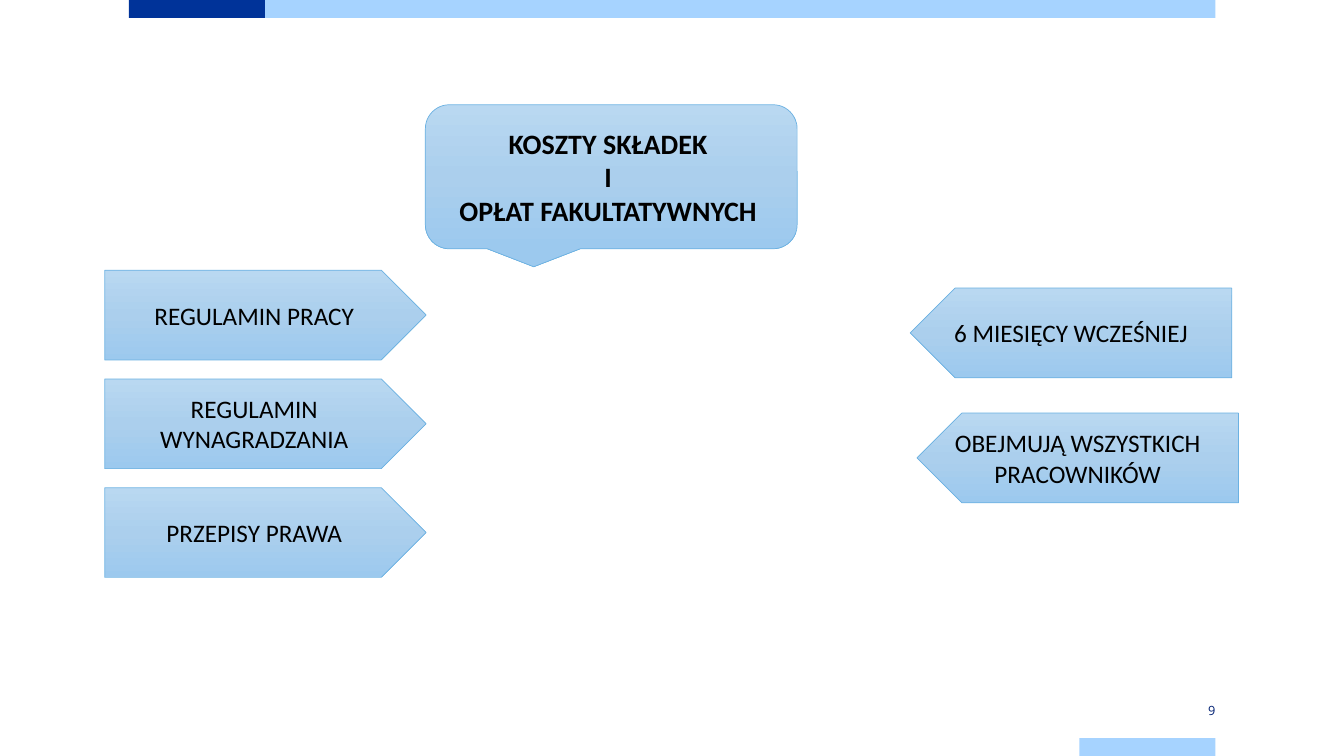
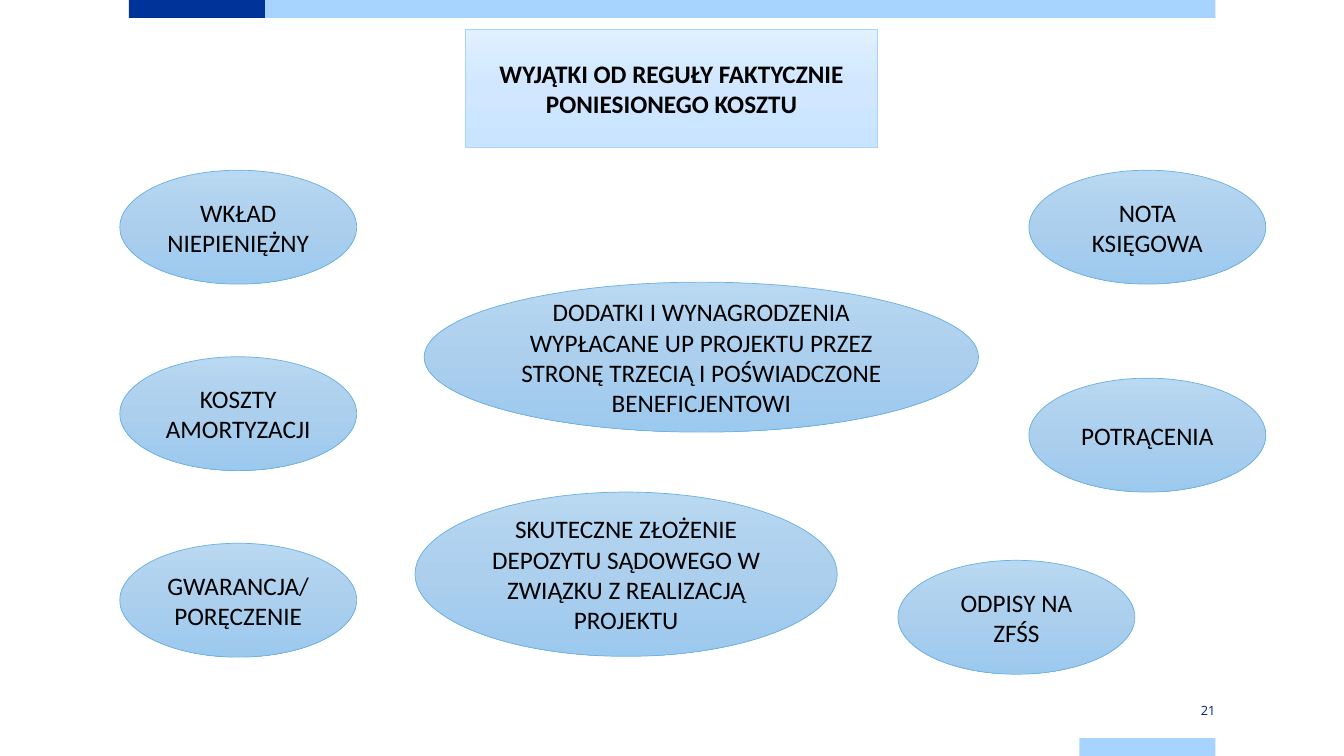
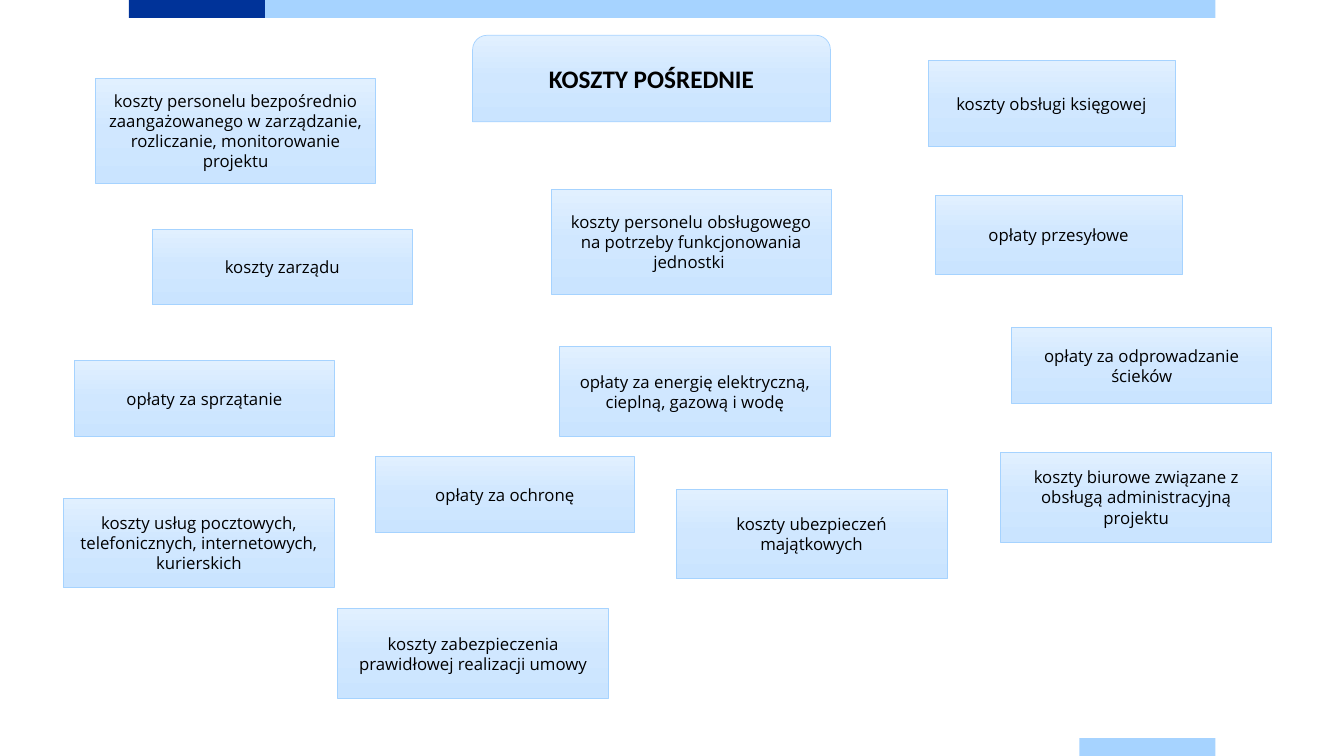
import copy

import pptx
import pptx.dml.color
import pptx.enum.shapes
import pptx.enum.text
import pptx.oxml.ns
import pptx.util

Cm = pptx.util.Cm
SHAPE = pptx.enum.shapes.MSO_SHAPE
ALIGN = pptx.enum.text.PP_ALIGN

COLORS = {
    "navy": "003399",
    "sky": "A6D3FF",
    "number": "002073",
    "text": "000000",
}
STYLES = {
    "blue": {"stops": ("B9D8F1", "ABCFED", "9CC9EE"), "line": "6BB1E2"},
    "pale": {"stops": ("E1F0FF", "D0E7FF", "CAE4FF"), "line": "A6D3FF"},
}
HEADING_FONT = "Calibri"
BODY_FONT = "Open Sans"

BAND_HEIGHT = 0.45
BANDS = [
    (3.25, 0, 3.43, "navy"),
    (6.68, 0, 23.95, "sky"),
    (27.2, 18.6, 3.43, "sky"),
]

PLATE_SIZE = (8.1, 2.26)
PLATE_TIP = 1.13
OVAL_SIZE = (5.97, 2.87)
TALL = (7.06, 2.64)
SLIM = (6.55, 1.91)
WIDE = (6.83, 2.26)

INDIRECT_COSTS = [
    ("koszty personelu bezpośrednio zaangażowanego w zarządzanie, rozliczanie, monitorowanie projektu", 2.41, 1.98, TALL),
    ("koszty zarządu", 3.84, 5.77, SLIM),
    ("koszty personelu obsługowego na potrzeby funkcjonowania jednostki ", 13.89, 4.78, TALL),
    ("koszty obsługi księgowej", 23.39, 1.52, (6.22, 2.18)),
    ("opłaty za energię elektryczną, cieplną, gazową i wodę", 14.1, 8.74, WIDE),
    ("opłaty przesyłowe", 23.57, 4.93, (6.22, 1.98)),
    ("opłaty za sprzątanie", 1.88, 9.09, SLIM),
    ("opłaty za odprowadzanie ścieków", 25.5, 8.26, SLIM),
    ("opłaty za ochronę", 9.45, 11.51, SLIM),
    ("koszty ubezpieczeń majątkowych", 17.04, 12.32, WIDE),
    ("koszty zabezpieczenia prawidłowej realizacji umowy", 8.51, 15.34, WIDE),
    ("koszty biurowe związane z obsługą administracyjną projektu", 25.22, 11.4, WIDE),
    ("koszty usług pocztowych, telefonicznych, internetowych, kurierskich", 1.6, 12.55, WIDE),
]


def rgb(value):
    return pptx.dml.color.RGBColor.from_string(value)


def write(shape, text, size, font=HEADING_FONT, bold=False, color="text", align=ALIGN.CENTER):
    frame = shape.text_frame
    frame.text = text
    frame.word_wrap = True
    frame.auto_size = pptx.enum.text.MSO_AUTO_SIZE.NONE
    frame.vertical_anchor = pptx.enum.text.MSO_ANCHOR.MIDDLE
    for para in frame.paragraphs:
        para.alignment = align
        for span in para.runs:
            span.font.name = font
            span.font.size = pptx.util.Pt(size)
            span.font.bold = bold
            span.font.color.rgb = rgb(COLORS[color])


def shade(shape, style):
    shape.shadow.inherit = False
    shape.fill.gradient()
    shape.fill.gradient_angle = 270
    stop_list = shape.element.spPr.find(".//" + pptx.oxml.ns.qn("a:gsLst"))
    stop_list.insert(1, copy.deepcopy(stop_list[0]))
    colors = STYLES[style]["stops"]
    for index, (stop, color) in enumerate(zip(shape.fill.gradient_stops, colors)):
        stop.position = index / 2
        stop.color.rgb = rgb(color)
    shape.line.color.rgb = rgb(STYLES[style]["line"])
    shape.line.width = pptx.util.Pt(0.5)


def add_block(page, kind, left, top, size, style):
    width, height = size
    shape = page.shapes.add_shape(kind, Cm(left), Cm(top), Cm(width), Cm(height))
    shade(shape, style)
    return shape


def add_heading(page, text, kind, left, top, size, style, points=18):
    block = add_block(page, kind, left, top, size, style)
    title = page.shapes.title
    title.left, title.top = block.left, block.top
    title.width, title.height = block.width, block.height
    write(title, text, points, bold=True)
    block.element.addnext(title.element)


def add_left_plate(page, text, left, top):
    width, height = PLATE_SIZE
    right, bottom, shoulder = left + width, top + height, left + PLATE_TIP
    points = [(shoulder, top), (left, top + height / 2), (shoulder, bottom), (right, bottom)]
    builder = page.shapes.build_freeform(Cm(right), Cm(top))
    builder.add_line_segments([(Cm(x), Cm(y)) for x, y in points], close=True)
    plate = builder.convert_to_shape()
    shade(plate, "blue")
    write(plate, text, 18)


def add_oval(page, text, left, top, size=OVAL_SIZE):
    write(add_block(page, SHAPE.OVAL, left, top, size, "blue"), text, 18)


def add_page_number(page, number):
    box = page.shapes.add_textbox(Cm(27.2), Cm(17.68), Cm(3.43), Cm(0.46))
    write(box, number, 9.1, BODY_FONT, color="number", align=ALIGN.RIGHT)
    frame = box.text_frame
    frame.margin_left = frame.margin_right = 0
    frame.margin_top = frame.margin_bottom = Cm(0.2)


def add_master_bands(deck, page):
    for shape_id, (left, top, width, color) in enumerate(BANDS, start=101):
        band = page.shapes.add_shape(SHAPE.RECTANGLE, Cm(left), Cm(top), Cm(width), Cm(BAND_HEIGHT))
        band.shadow.inherit = False
        band.fill.solid()
        band.fill.fore_color.rgb = rgb(COLORS[color])
        band.line.fill.background()
        band.element.nvSpPr.cNvPr.set("id", str(shape_id))
        deck.slide_master.shapes.element.append(band.element)


def fill_optional_costs(page):
    add_page_number(page, "9")
    add_heading(page, "KOSZTY SKŁADEK \vI \vOPŁAT FAKULTATYWNYCH ",
                SHAPE.ROUNDED_RECTANGULAR_CALLOUT, 10.72, 2.64, (9.37, 3.63), "blue", 20)
    rules = ["REGULAMIN PRACY", "REGULAMIN WYNAGRADZANIA", "PRZEPISY PRAWA"]
    for row, text in enumerate(rules):
        plate = add_block(page, SHAPE.PENTAGON, 2.64, 6.81 + 2.74 * row, PLATE_SIZE, "blue")
        write(plate, text, 18)
    add_left_plate(page, "6 MIESIĘCY WCZEŚNIEJ", 22.94, 7.26)
    add_left_plate(page, "OBEJMUJĄ WSZYSTKICH PRACOWNIKÓW", 23.11, 10.41)


def fill_exceptions(page):
    add_page_number(page, "21")
    add_heading(page, "WYJĄTKI OD REGUŁY FAKTYCZNIE PONIESIONEGO KOSZTU",
                SHAPE.RECTANGLE, 11.73, 0.74, (10.39, 2.97), "pale")
    left_column = ["WKŁAD NIEPIENIĘŻNY", "KOSZTY AMORTYZACJI", "GWARANCJA/PORĘCZENIE"]
    for row, text in enumerate(left_column):
        add_oval(page, text, 3.02, 4.29 + 4.7 * row)
    add_oval(page, "DODATKI I WYNAGRODZENIA WYPŁACANE UP PROJEKTU PRZEZ STRONĘ TRZECIĄ I POŚWIADCZONE BENEFICJENTOWI",
             10.69, 7.11, (13.97, 3.78))
    add_oval(page, "SKUTECZNE ZŁOŻENIE DEPOZYTU SĄDOWEGO W ZWIĄZKU Z REALIZACJĄ PROJEKTU",
             10.46, 12.4, (10.64, 4.14))
    add_oval(page, "NOTA KSIĘGOWA", 25.93, 4.29)
    add_oval(page, "POTRĄCENIA", 25.93, 9.53)
    add_oval(page, "ODPISY NA ZFŚS", 22.63, 14.12)


def fill_indirect_costs(page):
    add_heading(page, "KOSZTY POŚREDNIE", SHAPE.ROUND_2_SAME_RECTANGLE,
                11.91, 0.89, (9.02, 2.18), "pale")
    for text, left, top, size in INDIRECT_COSTS:
        card = add_block(page, SHAPE.RECTANGLE, left, top, size, "pale")
        write(card, text, 12, BODY_FONT)


def main():
    deck = pptx.Presentation()
    deck.slide_width, deck.slide_height = Cm(33.87), Cm(19.05)
    title_only = deck.slide_layouts[5]
    pages = [deck.slides.add_slide(title_only) for _ in range(3)]
    add_master_bands(deck, pages[0])
    for fill_page, page in zip((fill_optional_costs, fill_exceptions, fill_indirect_costs), pages):
        fill_page(page)
    deck.save("out.pptx")


if __name__ == "__main__":
    main()
